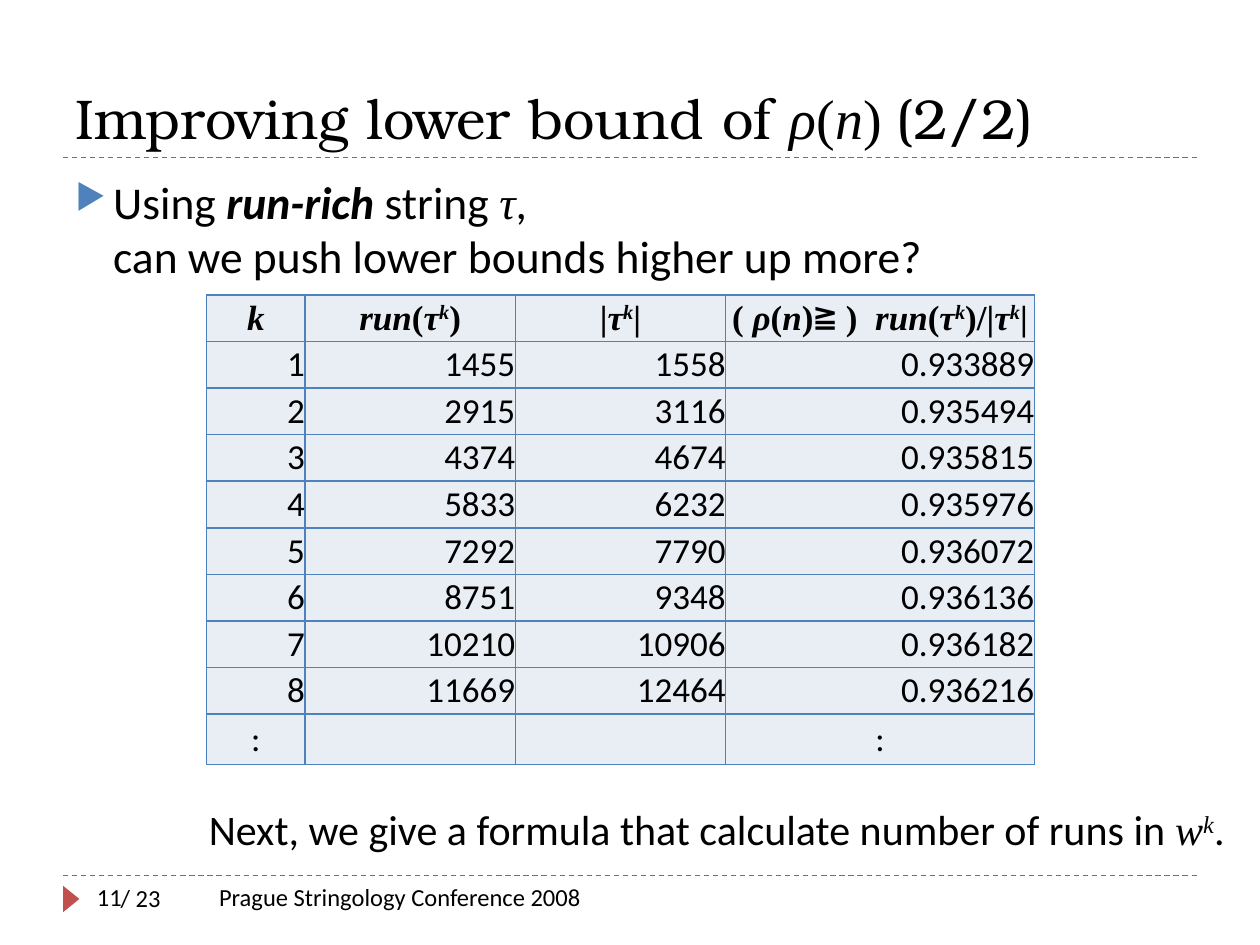
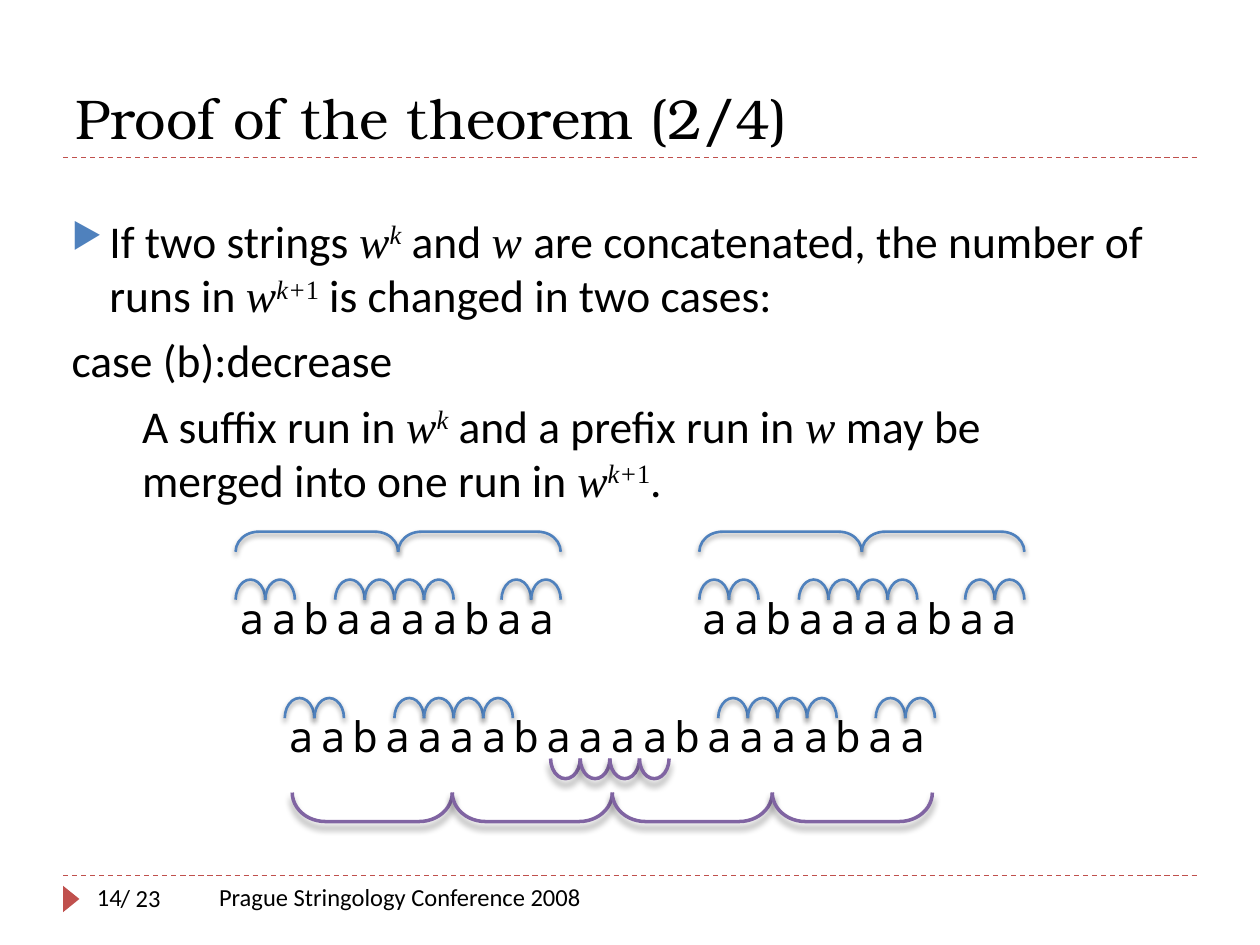
"""Build two slides on runs in strings: a table of bounds and a proof step."""
from lxml import etree
from pptx import Presentation
from pptx.dml.color import RGBColor
from pptx.enum.dml import MSO_LINE
from pptx.enum.shapes import MSO_CONNECTOR, MSO_SHAPE
from pptx.enum.text import MSO_ANCHOR, MSO_AUTO_SIZE, PP_ALIGN
from pptx.oxml import parse_xml
from pptx.oxml.ns import nsdecls, qn
from pptx.util import Inches, Pt

BLACK = RGBColor(0x00, 0x00, 0x00)
BLUE = RGBColor(0x4F, 0x81, 0xBD)
RED = RGBColor(0xC0, 0x50, 0x4D)
PLUM = RGBColor(0x80, 0x64, 0xA2)
PALE = RGBColor(0xE9, 0xED, 0xF4)
SANS, MATH, HEAD, MONO = "Calibri", "Times New Roman", "TeX Gyre Bonum", "Noto Sans Mono"
LEFT, MID, RIGHT = PP_ALIGN.LEFT, PP_ALIGN.CENTER, PP_ALIGN.RIGHT
LINE, DASH = MSO_CONNECTOR.STRAIGHT, MSO_LINE.DASH
ARCH, WEDGE = MSO_SHAPE.LEFT_BRACKET, MSO_SHAPE.ISOSCELES_TRIANGLE
LOW, CENTRE, FIXED = MSO_ANCHOR.BOTTOM, MSO_ANCHOR.MIDDLE, MSO_AUTO_SIZE.NONE

deck = Presentation()
deck.slide_width, deck.slide_height = Inches(10), Inches(7.5)
UNIT = deck.slide_width // 10


def grid(*cells):
    return [round(cell * UNIT) for cell in cells]


def write(para, parts, size, font=SANS, bold=False):
    """Add runs; styles: i italic math, m upright math, k and s the same raised, b strong."""
    for text, style in parts:
        if text == "\n":
            para.add_line_break()
            continue
        run = para.add_run()
        run.text = text
        face = run.font
        face.name = MATH if style in tuple("imks") else font
        face.size, face.color.rgb = Pt(size), BLACK
        face.bold, face.italic = bold or style == "b", style in tuple("ikb")
        if style in ("k", "s"):
            run._r.get_or_add_rPr().set("baseline", "30000")
        if font == MONO:
            run._r.get_or_add_rPr().set("spc", "400")


titles = [
    ("11", [("Improving lower bound of ", ""), ("ρ", "i"), ("(", "m"), ("n", "i"),
            (") ", "m"), ("(2/2)", "")]),
    ("14", [("Proof of the theorem (2/4)", "")]),
]
pages = []
for number, title in titles:
    page = deck.slides.add_slide(deck.slide_layouts[5])
    pages.append(page)
    for y in (6.95, 1.25):
        rule = page.shapes.add_connector(LINE, *grid(0.5, y, 9.5, y))
        rule.line.color.rgb, rule.line.width, rule.line.dash_style = RED, Pt(0.75), DASH
        etree.SubElement(rule._element.spPr, qn("a:effectLst"))
    mark = page.shapes.add_shape(WEDGE, *grid(0.46, 7.07, 0.21, 0.13))
    mark.rotation, mark.shadow.inherit = 90, False
    mark.fill.solid()
    mark.fill.fore_color.rgb = RED
    mark.line.fill.background()

    head = page.shapes.title
    head.left, head.top, head.width, head.height = grid(0.5, 0.17, 9, 1.08)
    frame = head.text_frame
    frame.vertical_anchor, frame.auto_size = LOW, FIXED
    frame.paragraphs[0].alignment = LEFT
    write(frame.paragraphs[0], title, 32, HEAD)

    for text, at in (("/ 23", (0.86, 6.96, 1.17, 0.34)), (number, (0.67, 6.95, 0.89, 0.4)),
                     ("Prague Stringology Conference 2008", (1.64, 6.95, 3.83, 0.4))):
        foot = page.shapes.add_textbox(*grid(*at)).text_frame
        foot.word_wrap = True
        write(foot.paragraphs[0], [(text, "")], 14)

bound, proof = pages

W, WK = ("w", "i"), [("w", "i"), ("k", "k")]
NEXT = [("w", "i"), ("k+", "k"), ("1", "s")]
bodies = [
    (bound, (0.5, 1.33, 9, 1), [
        (0.3, True, [("Using ", ""), ("run-rich", "b"), (" string ", ""), ("τ", "i"),
                     (", ", ""), ("\n", ""),
                     ("can we push lower bounds higher up more?", "")])]),
    (proof, (0.47, 1.64, 9, 2.5), [
        (0.3, True, [("If two strings ", ""), *WK, (" and ", ""), ("w ", "i"),
                     ("are concatenated, the number of runs in ", ""), *NEXT,
                     (" is changed in two cases:", "")]),
        (0, False, [("case (b):decrease", "")]),
        (0.56, False, [("A suffix run in ", ""), *WK, (" and a prefix run in ", ""), W,
                       (" may be", ""), ("\n", ""), ("merged into one run in ", ""),
                       *NEXT, (".", "")])]),
]
for page, at, paras in bodies:
    frame = page.shapes.add_textbox(*grid(*at)).text_frame
    frame.word_wrap = True
    for i, (inset, dot, parts) in enumerate(paras):
        para = frame.add_paragraph() if i else frame.paragraphs[0]
        para.space_before = Pt(6)
        write(para, parts, 26)
        props = para._p.get_or_add_pPr()
        props.set("marL", str(Inches(inset)))
        props.set("indent", str(-Inches(inset) if dot else 0))
        if dot:
            for xml in (f'<a:buClr {nsdecls("a")}><a:srgbClr val="{BLUE}"/></a:buClr>',
                        f'<a:buSzPct {nsdecls("a")} val="76000"/>',
                        f'<a:buChar {nsdecls("a")} char="▶"/>'):
                props.append(parse_xml(xml))

RUN = [("run", "i"), ("(", "m"), ("τ", "i"), ("k", "k")]
SIZE = [("τ", "i"), ("k", "k"), ("|", "m")]
heads = [
    [("k", "i")],
    RUN + [(")", "m")],
    [("|", "m")] + SIZE,
    [("( ", "m"), ("ρ", "i"), ("(", "m"), ("n", "i"), (")≧ )  ", "m")]
    + RUN + [(")/|", "m")] + SIZE,
]
rows = [
    ("1", "1455", "1558", "0.933889"),
    ("2", "2915", "3116", "0.935494"),
    ("3", "4374", "4674", "0.935815"),
    ("4", "5833", "6232", "0.935976"),
    ("5", "7292", "7790", "0.936072"),
    ("6", "8751", "9348", "0.936136"),
    ("7", "10210", "10906", "0.936182"),
    ("8", "11669", "12464", "0.936216"),
    (":", "", "", ":"),
]
lines = [heads] + [[[(text, "")] if text else [] for text in row] for row in rows]
table = bound.shapes.add_table(len(lines), 4, *grid(1.64, 2.34, 6.57, 3.7)).table
table.first_row = table.horz_banding = False
for col, width in zip(table.columns, grid(0.78, 1.67, 1.67, 2.45)):
    col.width = width
for r, line in enumerate(lines):
    table.rows[r].height = grid(0.37)[0]
    for c, parts in enumerate(line):
        cell = table.cell(r, c)
        cell.fill.solid()
        cell.fill.fore_color.rgb = PALE
        for i, side in enumerate(("lnL", "lnR", "lnT", "lnB")):
            cell._tc.get_or_add_tcPr().insert(i, parse_xml(
                f'<a:{side} {nsdecls("a")} w="12700"><a:solidFill>'
                f'<a:srgbClr val="{BLUE}"/></a:solidFill></a:{side}>'))
        if parts:
            cell.margin_left = cell.margin_right = cell.margin_top = cell.margin_bottom = 0
            cell.vertical_anchor = CENTRE
            para = cell.text_frame.paragraphs[0]
            para.alignment = RIGHT if 0 < r < len(rows) else MID
            write(para, parts, 20, bold=r == 0)

words = [
    (bound, (1.56, 6.33, 8.36, 0.5), SANS,
     [("Next, we give a formula that calculate number of runs in ", ""), *WK, (".", "")]),
    (proof, (1.8, 4.65, 4.38, 0.5), MONO, [("aabaaaabaa", "")]),
    (proof, (5.47, 4.65, 3.05, 0.5), MONO, [("aabaaaabaa", "")]),
    (proof, (2.19, 5.59, 5.86, 0.5), MONO, [("aabaaaabaaaabaaaabaa", "")]),
]
for page, at, font, parts in words:
    frame = page.shapes.add_textbox(*grid(*at)).text_frame
    frame.word_wrap = font == MONO
    write(frame.paragraphs[0], parts, 24, font)

STEP, TALL = 0.235, 0.16
chains = []
for x in (1.87, 5.55):
    chains += [(x, 4.22, 1.29, TALL, 2, BLUE)]
    chains += [(x + dx, 4.6, STEP, TALL, n, BLUE) for dx, n in ((0, 2), (0.79, 4), (2.11, 2))]
chains += [(x, 5.54, STEP, TALL, n, BLUE)
           for x, n in ((2.26, 2), (3.13, 4), (5.7, 4), (6.95, 2))]
chains += [(4.37, 6.02, STEP, TALL, 4, PLUM), (2.32, 6.29, 1.27, 0.23, 4, PLUM)]
for x, y, wide, tall, count, hue in chains:
    group = proof.shapes.add_group_shape()
    for i in range(count):
        left = x + i * wide + (wide - tall) / 2
        top = y - (wide - tall) / 2
        arc = group.shapes.add_shape(ARCH, *grid(left, top, tall, wide))
        arc.adjustments[0] = 1.143
        arc.rotation = 90 if hue == BLUE else 270
        arc.fill.background()
        arc.line.color.rgb, arc.line.width = hue, Pt(1.5 if hue == BLUE else 2)
        arc.shadow.inherit = False
        blur, drop = (3, 2) if hue == BLUE else (4, 3.4)
        arc._element.spPr.find(qn("a:effectLst")).append(parse_xml(
            f'<a:outerShdw {nsdecls("a")} blurRad="{Pt(blur)}" dist="{Pt(drop)}" '
            f'dir="5400000" rotWithShape="0"><a:srgbClr val="{BLACK}">'
            f'<a:alpha val="40000"/></a:srgbClr></a:outerShdw>'))

deck.save("out.pptx")
